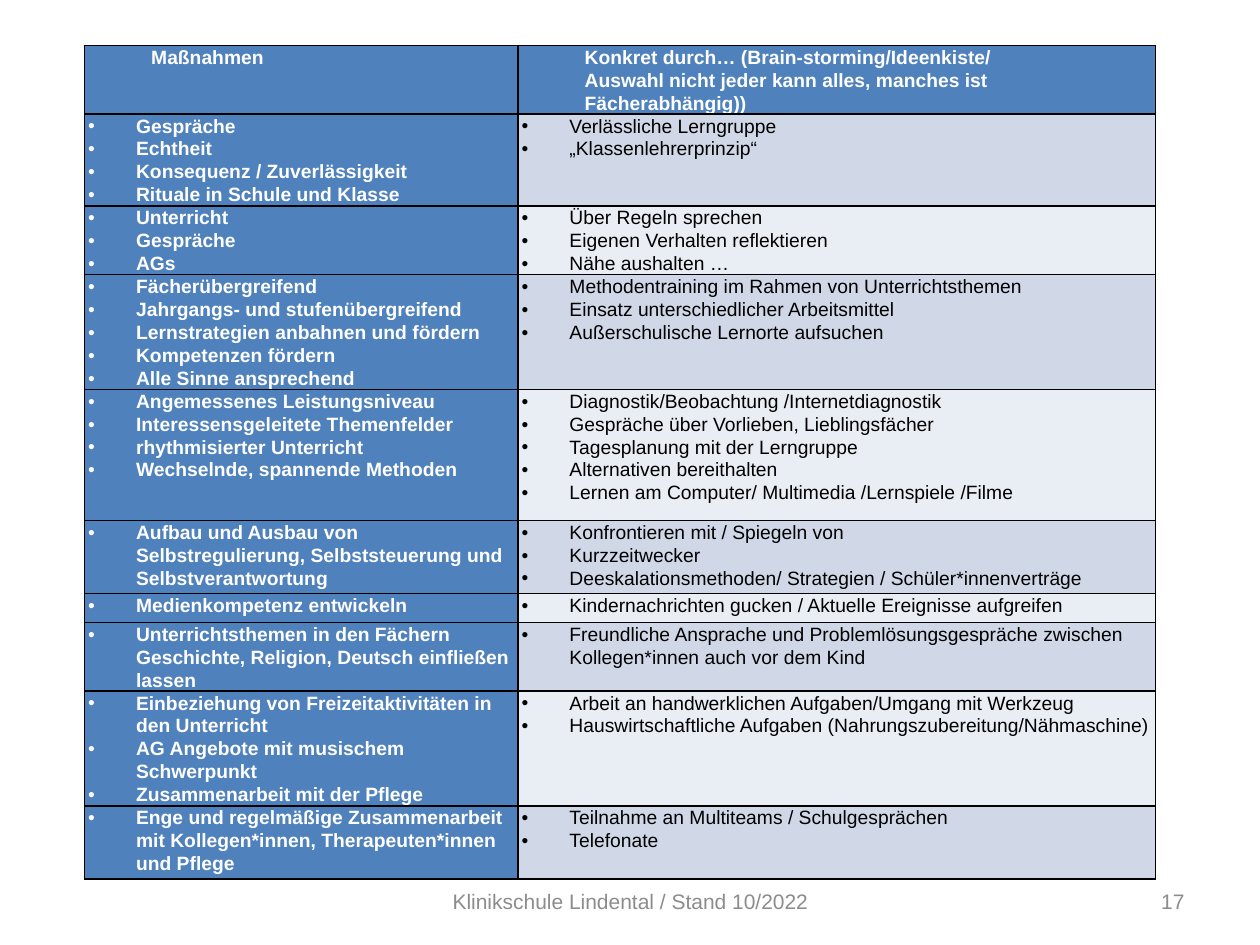
from lxml import etree
from pptx import Presentation
from pptx.dml.color import RGBColor
from pptx.enum.text import MSO_ANCHOR, PP_ALIGN
from pptx.oxml.ns import qn
from pptx.util import Inches, Pt

MID = MSO_ANCHOR.MIDDLE
CENTER = PP_ALIGN.CENTER
RIGHT = PP_ALIGN.RIGHT

BLUE = RGBColor(0x4F, 0x81, 0xBD)
DARK = RGBColor(0xD0, 0xD8, 0xE8)
LIGHT = RGBColor(0xE9, 0xED, 0xF4)
WHITE = RGBColor(0xFF, 0xFF, 0xFF)
BLACK = RGBColor(0, 0, 0)
GREY = RGBColor(0x8C, 0x8C, 0x8C)

WIDE, HIGH = Inches(10), Inches(7.5)
COLS = [3.44, 5.06]
ROWS = [0.47, 0.69, 0.46, 0.81, 1.04, 0.58, 0.23, 0.46, 0.81, 0.58]

HEAD = {"name": "Arial", "size": Pt(11), "bold": True}
BODY = {**HEAD, "bold": False}
FOOT = {**BODY, "size": Pt(12)}
EDGES = {"margin_left": Inches(0.03), "margin_right": Inches(0.03),
         "margin_top": 0, "margin_bottom": 0}

PLAN = [
    (["Maßnahmen"],
     ["Konkret durch… (Brain-storming/Ideenkiste/",
      "Auswahl nicht jeder kann alles, manches ist Fächerabhängig))"]),
    (["Gespräche", "Echtheit", "Konsequenz / Zuverlässigkeit",
      "Rituale in Schule und Klasse"],
     ["Verlässliche Lerngruppe", "„Klassenlehrerprinzip“"]),
    (["Unterricht", "Gespräche", "AGs"],
     ["Über Regeln sprechen", "Eigenen Verhalten reflektieren", "Nähe aushalten …"]),
    (["Fächerübergreifend", "Jahrgangs- und stufenübergreifend",
      "Lernstrategien anbahnen und fördern", "Kompetenzen fördern",
      "Alle Sinne ansprechend"],
     ["Methodentraining im Rahmen von Unterrichtsthemen",
      "Einsatz unterschiedlicher Arbeitsmittel",
      "Außerschulische Lernorte aufsuchen"]),
    (["Angemessenes Leistungsniveau", "Interessensgeleitete Themenfelder",
      "rhythmisierter Unterricht", "Wechselnde, spannende Methoden"],
     ["Diagnostik/Beobachtung /Internetdiagnostik",
      "Gespräche über Vorlieben, Lieblingsfächer",
      "Tagesplanung mit der Lerngruppe", "Alternativen bereithalten",
      "Lernen am Computer/ Multimedia /Lernspiele /Filme"]),
    (["Aufbau und Ausbau von Selbstregulierung, Selbststeuerung und "
      "Selbstverantwortung"],
     ["Konfrontieren mit / Spiegeln von", "Kurzzeitwecker",
      "Deeskalationsmethoden/ Strategien / Schüler*innenverträge"]),
    (["Medienkompetenz entwickeln"],
     ["Kindernachrichten gucken / Aktuelle Ereignisse aufgreifen"]),
    (["Unterrichtsthemen in den Fächern Geschichte, Religion, Deutsch "
      "einfließen lassen"],
     ["Freundliche Ansprache und Problemlösungsgespräche zwischen "
      "Kollegen*innen auch vor dem Kind"]),
    (["Einbeziehung von Freizeitaktivitäten in den Unterricht",
      "AG Angebote mit musischem Schwerpunkt", "Zusammenarbeit mit der Pflege"],
     ["Arbeit an handwerklichen Aufgaben/Umgang mit Werkzeug",
      "Hauswirtschaftliche Aufgaben (Nahrungszubereitung/Nähmaschine)"]),
    (["Enge und regelmäßige Zusammenarbeit mit Kollegen*innen, "
      "Therapeuten*innen und Pflege"],
     ["Teilnahme an Multiteams / Schulgesprächen", "Telefonate"]),
]


def style(item, look):
    for key, value in look.items():
        setattr(item, key, value)


def write(para, text, look, color):
    run = para.add_run()
    run.text = text
    style(run.font, look)
    run.font.color.rgb = color


def indent(para, left, hang=0, mark=None):
    props = para._p.get_or_add_pPr()
    props.set("marL", str(Inches(left)))
    props.set("indent", str(Inches(hang)))
    if mark:
        etree.SubElement(props, qn("a:buFont")).set("typeface", "Arial")
        etree.SubElement(props, qn("a:buChar")).set("char", mark)


def frame(cell):
    props = cell._tc.get_or_add_tcPr()
    for spot, side in enumerate(("lnL", "lnR", "lnT", "lnB")):
        line = etree.Element(qn("a:" + side), w=str(Pt(1)))
        fill = etree.SubElement(line, qn("a:solidFill"))
        etree.SubElement(fill, qn("a:srgbClr")).set("val", str(BLACK))
        props.insert(spot, line)


def fill_cell(cell, lines, row, col):
    strong = row == 0 or col == 0
    style(cell, EDGES)
    cell.fill.solid()
    cell.fill.fore_color.rgb = BLUE if strong else DARK if row % 2 else LIGHT
    frame(cell)
    text = cell.text_frame
    for spot, line in enumerate(lines):
        para = text.paragraphs[0] if spot == 0 else text.add_paragraph()
        para.line_spacing = 1.07
        if row == 0:
            indent(para, 0.5)
        else:
            indent(para, 0.38, -0.38, "•")
        write(para, line, HEAD if strong else BODY, WHITE if strong else BLACK)


def add_plan(slide, left, top, width, height):
    table = slide.shapes.add_table(
        len(ROWS), len(COLS), left, top, width, height).table
    for col, share in zip(table.columns, COLS):
        col.width = int(width * share / sum(COLS))
    for row, share in zip(table.rows, ROWS):
        row.height = int(height * share / sum(ROWS))
    for row, pair in enumerate(PLAN):
        for col, lines in enumerate(pair):
            fill_cell(table.cell(row, col), lines, row, col)


def add_note(slide, box, text, align):
    area = slide.shapes.add_textbox(*box).text_frame
    style(area, {"word_wrap": True, "vertical_anchor": MID})
    para = area.paragraphs[0]
    para.alignment = align
    write(para, text, FOOT, GREY)


def add_foot(slide, left, top, width, height):
    notes = [(0.342, 0.317, "Klinikschule Lindental / Stand 10/2022", CENTER),
             (0.717, 0.233, "17", RIGHT)]
    for start, share, text, align in notes:
        box = left + int(width * start), top, int(width * share), height
        add_note(slide, box, text, align)


def main():
    deck = Presentation()
    style(deck, {"slide_width": WIDE, "slide_height": HIGH})
    slide = deck.slides.add_slide(deck.slide_layouts[6])
    add_plan(slide, int(WIDE * 0.067), int(HIGH * 0.048),
             Inches(sum(COLS)), Inches(sum(ROWS)))
    add_foot(slide, 0, Inches(6.95), WIDE, Inches(0.4))
    deck.save("out.pptx")


if __name__ == "__main__":
    main()
